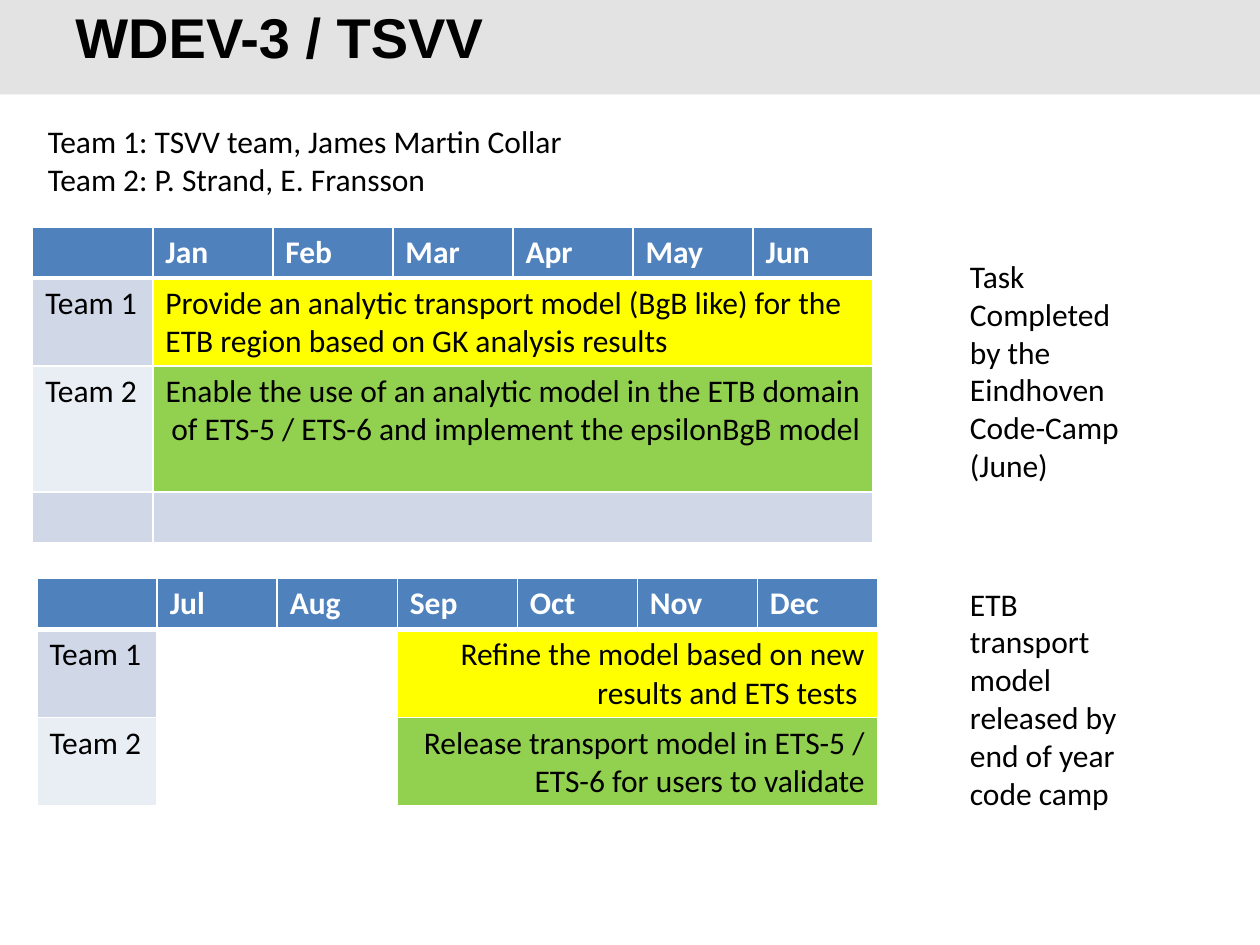
import pptx
import pptx.dml.color
import pptx.enum.shapes
import pptx.enum.text
import pptx.oxml
import pptx.oxml.ns
import pptx.util
import lxml.etree

Pt = pptx.util.Pt
RIGHT = pptx.enum.text.PP_ALIGN.RIGHT
LEFT = pptx.enum.text.PP_ALIGN.LEFT
HEADER, BAND, LIGHT_BAND = "4F81BD", "D0D8E8", "E9EDF4"
YELLOW, GREEN, WHITE, BLACK = "FFFF00", "92D050", "FFFFFF", "000000"


def color(value):
    return pptx.dml.color.RGBColor.from_string(value)


def style(paragraph, size=18, name="Calibri", ink=BLACK, bold=False):
    paragraph.font.size = Pt(size)
    paragraph.font.name = name
    paragraph.font.color.rgb = color(ink)
    paragraph.font.bold = bold


deck = pptx.Presentation()
deck.slide_width, deck.slide_height = Pt(720), Pt(540)
slide = deck.slides.add_slide(deck.slide_layouts[6])

banner = slide.shapes.add_shape(
    pptx.enum.shapes.MSO_SHAPE.RECTANGLE, 0, 0, Pt(720), Pt(54))
banner.shadow.inherit = False
banner.fill.solid()
banner.fill.fore_color.rgb = color("E3E3E3")
banner.line.fill.background()

title = slide.shapes.add_textbox(Pt(36), Pt(5.8), Pt(594), Pt(36)).text_frame
title.word_wrap = True
title.vertical_anchor = pptx.enum.text.MSO_ANCHOR.MIDDLE
title.text = "WDEV-3 / TSVV"
title.paragraphs[0].line_spacing = Pt(32)
style(title.paragraphs[0], 32, "Arial", bold=True)

notes = [
    (20.2, 66.2, 516, 51,
     "Team 1: TSVV team, James Martin Collar\nTeam 2: P. Strand, E. Fransson"),
    (547.2, 143.3, 113, 138.2, "Task Completed by the Eindhoven Code-Camp (June)"),
    (547.2, 330.5, 113, 138.2, "ETB transport model released by end of year code camp"),
]
for left, top, width, height, text in notes:
    note = slide.shapes.add_textbox(Pt(left), Pt(top), Pt(width), Pt(height)).text_frame
    note.word_wrap = True
    note.text = text
    for paragraph in note.paragraphs:
        style(paragraph)

half_years = [
    (18.7, 129.6, ["Jan", "Feb", "Mar", "Apr", "May", "Jun"], 1, [
        (50.3, "Team 1", BAND, YELLOW, LEFT,
         "Provide an analytic transport model (BgB like) for the ETB region "
         "based on GK analysis results"),
        (72, "Team 2", LIGHT_BAND, GREEN, RIGHT,
         "Enable the use of an analytic model in the ETB domain of ETS-5 / ETS-6 "
         "and implement the epsilonBgB model "),
        (29.2, "", BAND, BAND, LEFT, ""),
    ]),
    (21.2, 330.5, ["Jul", "Aug", "Sep", "Oct", "Nov", "Dec"], 3, [
        (50.3, "Team 1", BAND, YELLOW, RIGHT,
         "Refine the model based on new results and ETS tests "),
        (50.3, "Team 2", LIGHT_BAND, GREEN, RIGHT,
         "Release transport model in ETS-5 / ETS-6 for users to validate"),
        (29.2, "", WHITE, WHITE, LEFT, ""),
    ]),
]
for left, top, months, start, tasks in half_years:
    heights = [29.2] + [task[0] for task in tasks]
    schedule = slide.shapes.add_table(
        len(heights), 7, Pt(left), Pt(top), Pt(480.2), Pt(sum(heights))).table
    for column in schedule.columns:
        column.width = Pt(68.6)
    for row, height in enumerate(heights):
        schedule.rows[row].height = Pt(height)
        if row == 0:
            texts, fills = [""] + months, [HEADER] * 7
        else:
            _, team, team_fill, task_fill, align, task = tasks[row - 1]
            texts = [team] + [""] * 6
            texts[start] = task
            fills = [team_fill] + [WHITE] * (start - 1) + [task_fill] * (7 - start)
            schedule.cell(row, start).merge(schedule.cell(row, 6))
        for col in range(7):
            cell = schedule.cell(row, col)
            cell.text = texts[col]
            paragraph = cell.text_frame.paragraphs[0]
            style(paragraph, ink=BLACK if row else WHITE, bold=row == 0)
            if row and col == start:
                paragraph.alignment = align
            for side in "LRTB":
                thick = (row, side) in [(0, "B"), (1, "T")]
                edge = lxml.etree.SubElement(
                    cell._tc.get_or_add_tcPr(), pptx.oxml.ns.qn("a:ln" + side),
                    w=str(Pt(3 if thick else 1)))
                paint = lxml.etree.SubElement(edge, pptx.oxml.ns.qn("a:solidFill"))
                lxml.etree.SubElement(paint, pptx.oxml.ns.qn("a:srgbClr"), val=WHITE)
            cell.fill.solid()
            cell.fill.fore_color.rgb = color(fills[col])

deck.save("out.pptx")
